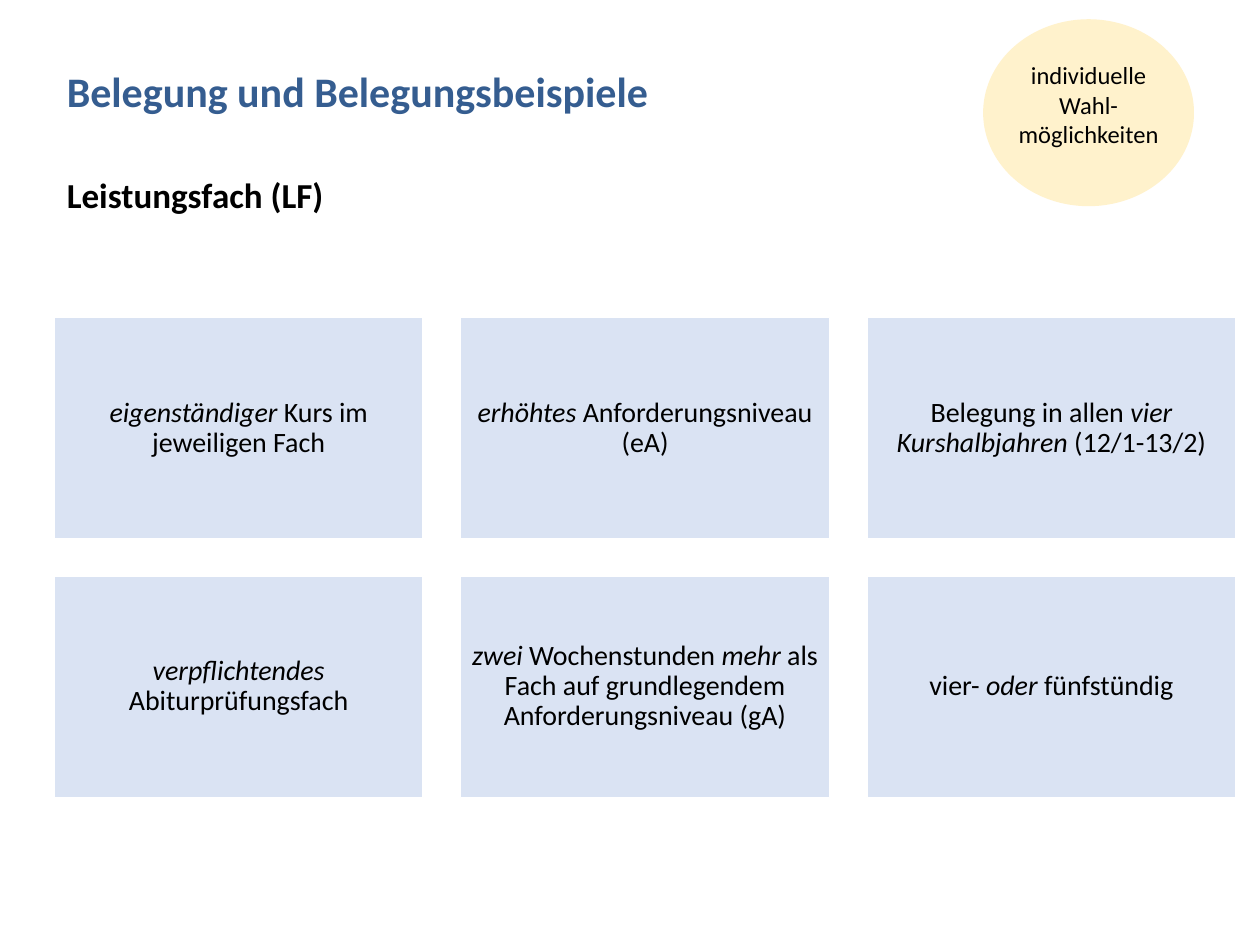
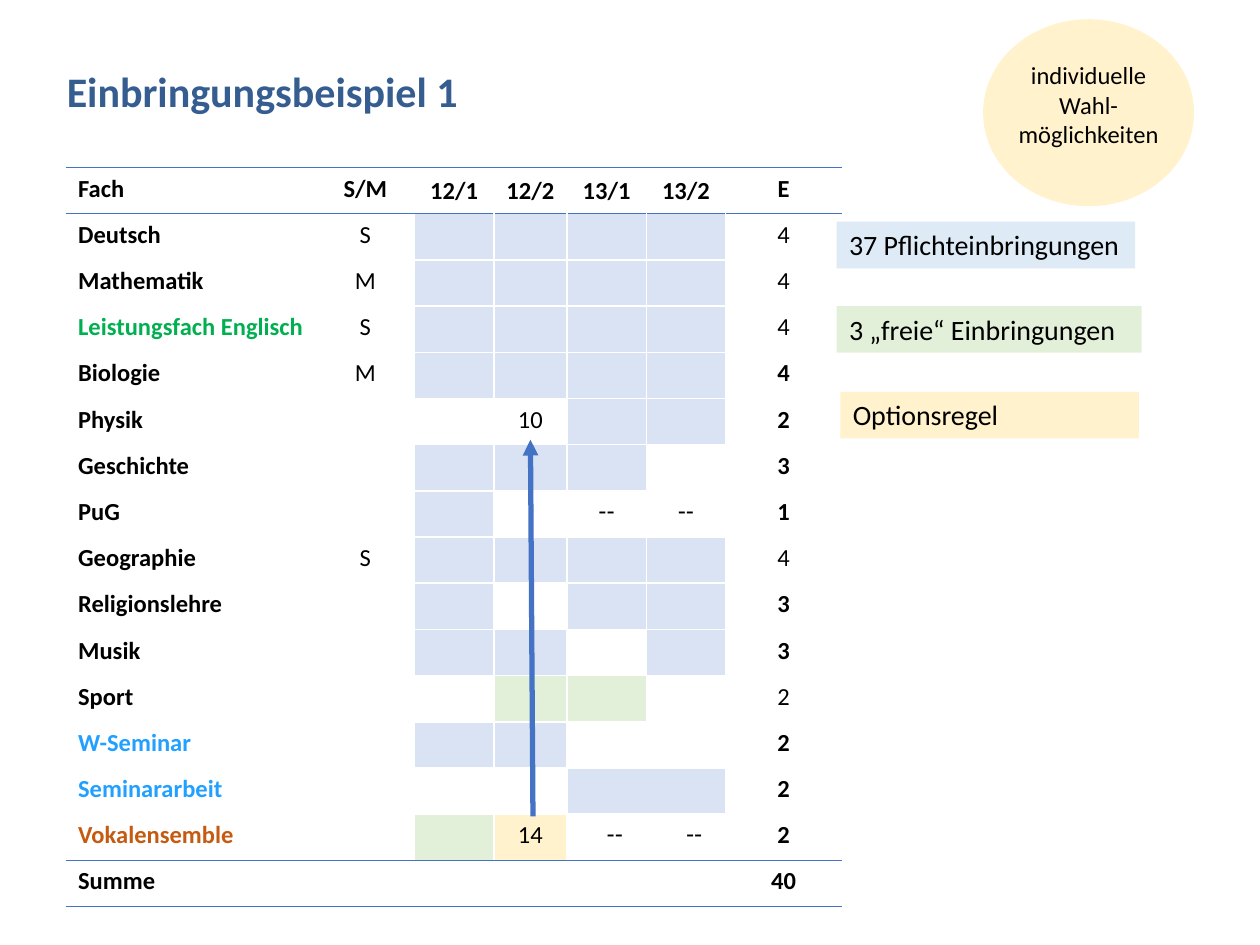
from lxml import etree
from pptx import Presentation
from pptx.dml.color import RGBColor
from pptx.enum import shapes as sh, text as tx
from pptx.oxml.ns import qn
from pptx.util import Inches, Pt

# Shared colours and formats
NAVY = RGBColor(0x35, 0x5D, 0x90)
BLACK = RGBColor(0, 0, 0)
WHITE = RGBColor(0xFF, 0xFF, 0xFF)
LINE = RGBColor(0x44, 0x72, 0xC4)
BLUE = RGBColor(0xDA, 0xE3, 0xF3)
PALE = RGBColor(0xDE, 0xEB, 0xF7)
GREEN = RGBColor(0xE2, 0xF0, 0xD9)
CREAM = RGBColor(0xFF, 0xF2, 0xCC)
LEAF = RGBColor(0, 0xB0, 0x50)
SKY = RGBColor(0x21, 0xA0, 0xFF)
RUST = RGBColor(0xC5, 0x5A, 0x11)

FONT = {"name": "Calibri", "bold": False, "italic": False}
TITLE = {"size": Pt(24), "bold": True, "color": NAVY}
HEAD = {"size": Pt(20), "bold": True}
BODY = {"size": Pt(16)}
SMALL = {"size": Pt(14)}
MID = tx.PP_ALIGN.CENTER
LEFT = tx.PP_ALIGN.LEFT

# Slide content; stars enclose italics
TILES = [
    "*eigenständiger *Kurs im jeweiligen Fach",
    "*erhöhtes* Anforderungsniveau (eA)",
    "Belegung in allen *vier Kurshalbjahren *(12/1-13/2)",
    "*verpflichtendes* Abiturprüfungsfach",
    "*zwei* Wochenstunden *mehr* als Fach auf grundlegendem "
    "Anforderungsniveau (gA)",
    "vier- *oder *fünfstündig",
]
WIDTHS = [1.99, 0.78, 0.63, 0.58, 0.63, 0.13, 0.5, 0.92]
TERMS = ["12/1", "12/2", "13/1", "13/2"]
FILLS = {"b": BLUE, "g": GREEN, "y": CREAM, "w": WHITE}
# Subject, S/M, term marks (fill and text), total, total is bold
ROWS = [
    ("Deutsch", "S", "b b b b", "4", False),
    ("Mathematik", "M", "b b b b", "4", False),
    ("Leistungsfach Englisch", "S", "b b b b", "4", False),
    ("Biologie", "M", "b b b b", "4", True),
    ("Physik", "", "w w10 b b", "2", True),
    ("Geschichte", "", "b b b w", "3", True),
    ("PuG", "", "b w w-- w--", "1", True),
    ("Geographie", "S", "b b b b", "4", False),
    ("Religionslehre", "", "b w b b", "3", True),
    ("Musik", "", "b b w b", "3", True),
    ("Sport", "", "w g g w", "2", False),
    ("W-Seminar", "", "b b w", "2", True),
    ("Seminararbeit", "", "w w b", "2", True),
    ("Vokalensemble", "", "g y14 w-- w--", "2", True),
]
TINTS = {"Leistungsfach Englisch": LEAF, "W-Seminar": SKY,
         "Seminararbeit": SKY, "Vokalensemble": RUST}
SPANS = {"W-Seminar": (4, 6), "Seminararbeit": (4, 6),
         "Vokalensemble": (4, 5)}


def box(*nums):
    return [Inches(n) for n in nums]


def style(font, form):
    for key, val in {**FONT, "color": BLACK, **form}.items():
        if key == "color":
            font.color.rgb = val
        else:
            setattr(font, key, val)


def write(frame, words, form, align=LEFT, lead=None):
    """Fill a text frame: one paragraph a line, stars for italics."""
    for num, line in enumerate(words.split("\n")):
        para = frame.add_paragraph() if num else frame.paragraphs[0]
        para.alignment = align
        para.line_spacing = lead
        for odd, part in enumerate(line.split("*")):
            if part:
                run = para.add_run()
                run.text = part
                style(run.font, {**form, "italic": odd % 2 == 1})


def place(hold, area, words, form):
    """Move and fill a title or body placeholder."""
    hold.left, hold.top, hold.width, hold.height = box(*area)
    frame = hold.text_frame
    frame.auto_size = tx.MSO_AUTO_SIZE.NONE
    frame.vertical_anchor = tx.MSO_ANCHOR.TOP
    write(frame, words, form)
    para = frame.paragraphs[0]
    para.space_before = Pt(0)
    prop = para._p.get_or_add_pPr()
    prop.set("marL", "0")
    prop.set("indent", "0")
    etree.SubElement(prop, qn("a:buNone"))


def block(slide, kind, area, fill, edge=None):
    item = slide.shapes.add_shape(kind, *box(*area))
    item.shadow.inherit = False
    item.fill.solid()
    item.fill.fore_color.rgb = fill
    if edge is None:
        item.line.fill.background()
    else:
        item.line.color.rgb = edge
        item.line.width = Pt(1)
    return item


def badge(slide):
    block(slide, sh.MSO_SHAPE.OVAL, (7.81, 0.16, 1.66, 1.47), CREAM, CREAM)
    note = slide.shapes.add_textbox(*box(7.93, 0.43, 1.42, 0.81))
    note.text_frame.word_wrap = True
    write(note.text_frame, "individuelle\nWahl-\nmöglichkeiten", SMALL, MID)


def tile(slide, area, words):
    frame = block(slide, sh.MSO_SHAPE.RECTANGLE, area, BLUE, WHITE).text_frame
    for side in ("left", "top", "right", "bottom"):
        setattr(frame, "margin_" + side, Inches(0.07))
    frame.word_wrap = True
    frame.vertical_anchor = tx.MSO_ANCHOR.MIDDLE
    write(frame, words, BODY, MID, 0.9)


def label(slide, area, words, fill):
    frame = block(slide, sh.MSO_SHAPE.RECTANGLE, area, fill).text_frame
    frame.word_wrap = False
    frame.vertical_anchor = tx.MSO_ANCHOR.TOP
    write(frame, words, BODY)


def arrow(slide, start, end):
    link = slide.shapes.add_connector(sh.MSO_CONNECTOR.STRAIGHT,
                                      *box(*start, *end))
    link.line.color.rgb = LINE
    link.line.width = Pt(3)
    etree.SubElement(link.line._get_or_add_ln(), qn("a:tailEnd"),
                     type="triangle")
    etree.SubElement(link._element.spPr, qn("a:effectLst"))


def rule(cell, sides, color):
    """Draw 1 pt borders; sides come in the order L, R, T, B."""
    prop = cell._tc.get_or_add_tcPr()
    for side in sides:
        line = etree.SubElement(prop, qn("a:ln" + side), w="12700")
        fill = etree.SubElement(line, qn("a:solidFill"))
        etree.SubElement(fill, qn("a:srgbClr"), val=str(color))


def put(cell, words, align=MID, **form):
    if words:
        write(cell.text_frame, words, {**SMALL, **form}, align)


def terms(grid, row, name, marks):
    """Fill the coloured term cells of one subject."""
    first, last = SPANS.get(name, (5, 6))
    grid.cell(row, first).merge(grid.cell(row, last))
    cols = [c for c in range(2, 7) if not first < c <= last]
    for col, mark in zip(cols, marks.split()):
        cell = grid.cell(row, col)
        sides = [s for s, skip in (("L", col == 2), ("R", col >= 5),
                                   ("T", row == 1), ("B", row == len(ROWS)))
                 if not skip]
        rule(cell, sides, WHITE)
        cell.fill.solid()
        cell.fill.fore_color.rgb = FILLS[mark[0]]
        put(cell, mark[1:],
            name="Arial" if mark.endswith("--") else "Calibri")


def chart(slide):
    """Build the table of subjects and terms."""
    count = len(ROWS) + 2
    grid = slide.shapes.add_table(count, len(WIDTHS),
                                  *box(0.52, 1.33, 6.16, 5.87)).table
    grid.first_row = grid.horz_banding = False
    # Plain table style without grid
    grid._tbl.tblPr.find(qn("a:tableStyleId")).text = (
        "{2D5ABB26-0587-4C30-8999-92F81FD0307C}")
    for col, width in zip(grid.columns, WIDTHS):
        col.width = Inches(width)
    for row in grid.rows:
        row.height = Inches(5.87 / count)

    # Header and sum rows
    end = count - 1
    for row in (0, end):
        grid.cell(row, 5).merge(grid.cell(row, 6))
        for col in range(len(WIDTHS)):
            rule(grid.cell(row, col), "TB", LINE)
    put(grid.cell(0, 0), "Fach", LEFT, bold=True)
    put(grid.cell(0, 1), "S/M", bold=True)
    for col, term in enumerate(TERMS, 2):
        cell = grid.cell(0, col)
        cell.vertical_anchor = tx.MSO_ANCHOR.MIDDLE
        put(cell, term, bold=True)
    put(grid.cell(0, 7), "E", bold=True)
    put(grid.cell(end, 0), "Summe", LEFT, bold=True)
    put(grid.cell(end, 7), "40", bold=True)

    # Subject rows
    for row, (name, kind, marks, total, bold) in enumerate(ROWS, 1):
        put(grid.cell(row, 0), name, LEFT, bold=True,
            color=TINTS.get(name, BLACK))
        put(grid.cell(row, 1), kind)
        terms(grid, row, name, marks)
        put(grid.cell(row, 7), total, bold=bold)

    # Unmarked cells are clear; empty ones keep the small line height
    for cell in grid.iter_cells():
        if cell.fill.type is None:
            cell.fill.background()
        if not cell.text:
            etree.SubElement(cell.text_frame.paragraphs[0]._p,
                             qn("a:endParaRPr"), sz="1400")


def start(deck, layout, words):
    slide = deck.slides.add_slide(deck.slide_layouts[layout])
    place(slide.shapes.title, (0.43, 0.47, 9.37, 0.87), words, TITLE)
    return slide


def main():
    deck = Presentation()
    deck.slide_width, deck.slide_height = box(10, 7.5)

    # Slide 1: features of the advanced course
    slide = start(deck, 1, "Belegung und Belegungsbeispiele")
    place(slide.placeholders[1], (0.43, 1.33, 9.05, 0.44),
          "Leistungsfach (LF)", HEAD)
    for num, words in enumerate(TILES):
        row, col = divmod(num, 3)
        tile(slide, (0.43 + 3.225 * col, 2.52 + 2.05 * row, 2.93, 1.76),
             words)
    badge(slide)

    # Slide 2: example with table, legend and arrow
    slide = start(deck, 5, "Einbringungsbeispiel 1")
    chart(slide)
    badge(slide)
    label(slide, (6.64, 1.76, 2.37, 0.37), "37 Pflichteinbringungen", PALE)
    label(slide, (6.64, 2.43, 2.42, 0.37), "3 „freie“ Einbringungen", GREEN)
    label(slide, (6.67, 3.11, 2.37, 0.37), "Optionsregel", CREAM)
    arrow(slide, (4.23, 6.48), (4.21, 3.49))

    deck.save("out.pptx")


if __name__ == "__main__":
    main()
